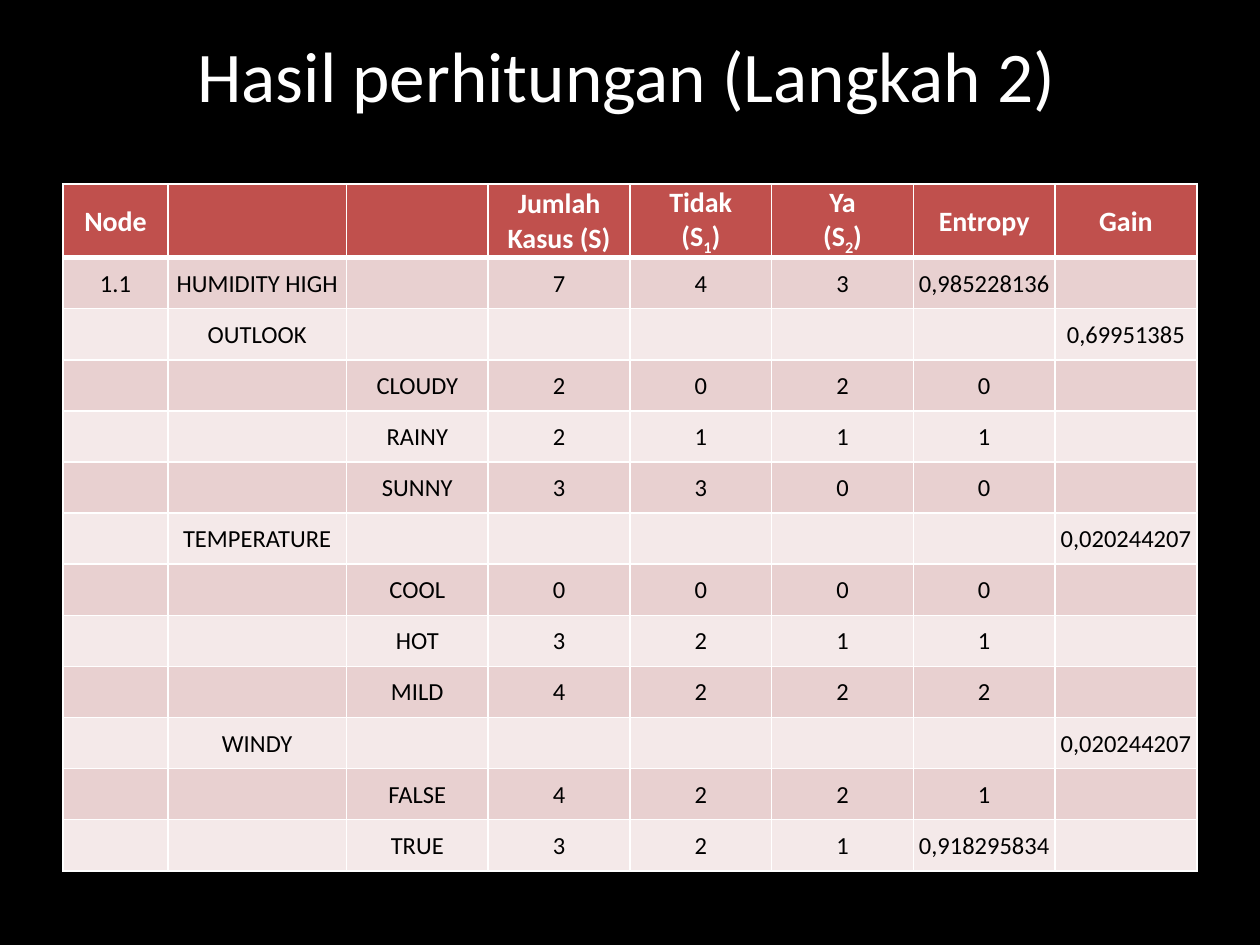
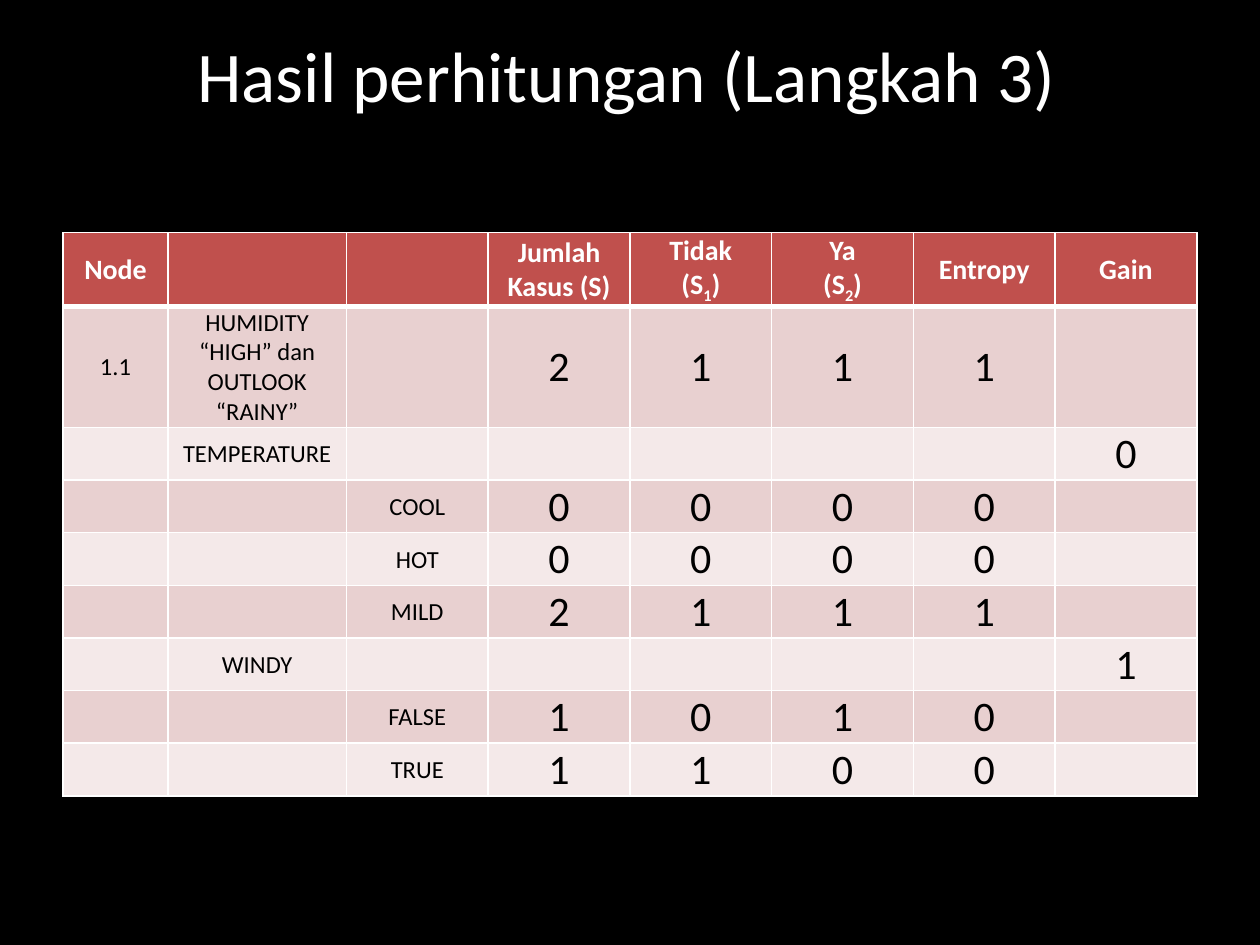
from dataclasses import dataclass

from lxml.etree import SubElement as Sub
from pptx import Presentation
from pptx.dml.color import RGBColor as Rgb
from pptx.enum.text import MSO_ANCHOR as Anchor, MSO_AUTO_SIZE as Fit, PP_ALIGN as Align
from pptx.oxml.ns import qn
from pptx.util import Pt


@dataclass(frozen=True)
class Theme:
    face: str = "Calibri"
    back: str = "000000"
    light: str = "FFFFFF"
    ink: str = "000000"
    head: str = "C0504D"
    bands: tuple = ("E8D0D0", "F4E9E9")
    title: float = 40.7
    label: int = 16
    body: int = 14
    thin: int = 1
    thick: int = 3


THEME = Theme()
COLS = (60, 102) + (81,) * 6
TITLE = (34, 22, 648, 50)
HEAD = ("Node", "", "", "Jumlah Kasus (S)", "Tidak\n(S_1)", "Ya\n(S_2)", "Entropy", "Gain")
HEAD_TALL = 42


def root(name, *vals):
    return ("1.1", name, "", *vals, "")


def group(name, gain):
    return ("", name, *[""] * 5, gain)


def case(name, *vals):
    return ("", "", name, *vals, "")


STEP_2 = (
    root("HUMIDITY HIGH", "7", "4", "3", "0,985228136"),
    group("OUTLOOK", "0,69951385"),
    case("CLOUDY", *"2020"),
    case("RAINY", *"2111"),
    case("SUNNY", *"3300"),
    group("TEMPERATURE", "0,020244207"),
    case("COOL", *"0000"),
    case("HOT", *"3211"),
    case("MILD", *"4222"),
    group("WINDY", "0,020244207"),
    case("FALSE", *"4221"),
    case("TRUE", "3", "2", "1", "0,918295834"),
)
STEP_3 = (
    root("HUMIDITY “HIGH” dan OUTLOOK “RAINY”", *"2111"),
    group("TEMPERATURE", "0"),
    case("COOL", *"0000"),
    case("HOT", *"0000"),
    case("MILD", *"2111"),
    group("WINDY", "1"),
    case("FALSE", *"1010"),
    case("TRUE", *"1100"),
)


def apply(item, form):
    for key, val in form.items():
        setattr(item, key, val)


def add_run(para, text, size, color, bold=False):
    run = para.add_run()
    run.text = text
    apply(run.font, {"name": THEME.face, "size": Pt(size), "bold": bold})
    run.font.color.rgb = Rgb.from_string(color)
    return run


def add_line(para, text, *look):
    start, mark, rest = text.partition("_")
    add_run(para, start, *look)
    if mark:
        low = add_run(para, rest[0], *look)
        low.font._element.set("baseline", "-25000")
        add_run(para, rest[1:], *look)


def add_edges(cell, top, base):
    props = cell._tc.get_or_add_tcPr()
    for side, width in zip("LRTB", (THEME.thin, THEME.thin, top, base)):
        edge = Sub(props, qn(f"a:ln{side}"), w=str(Pt(width)))
        Sub(Sub(edge, qn("a:solidFill")), qn("a:srgbClr"), val=THEME.light)


def fill_cell(cell, text, fill, look, top, base):
    apply(cell, {
        "margin_left": Pt(0.72), "margin_right": Pt(0.72),
        "margin_top": Pt(0.72), "margin_bottom": Pt(0),
        "vertical_anchor": Anchor.MIDDLE,
    })
    add_edges(cell, top, base)
    cell.fill.solid()
    cell.fill.fore_color.rgb = Rgb.from_string(fill)
    for i, line in enumerate(text.split("\n") if text else ()):
        frame = cell.text_frame
        para = frame.add_paragraph() if i else frame.paragraphs[0]
        para.alignment = Align.CENTER
        add_line(para, line, *look)


def add_title(slide, text, box):
    title = slide.shapes.title
    apply(title, dict(zip(("left", "top", "width", "height"), map(Pt, box))))
    frame = title.text_frame
    apply(frame, {"word_wrap": True, "auto_size": Fit.NONE, "vertical_anchor": Anchor.MIDDLE})
    para = frame.paragraphs[0]
    apply(para, {"alignment": Align.CENTER, "line_spacing": 0.8})
    add_run(para, text, THEME.title, THEME.light)


def add_grid(slide, rows, box, talls, size):
    grid = slide.shapes.add_table(len(rows) + 1, len(COLS), *map(Pt, box)).table
    grid.horz_banding = False
    for col, width in zip(grid.columns, COLS):
        col.width = Pt(width)
    for row, tall in zip(grid.rows, talls):
        row.height = Pt(tall)
    for r, texts in enumerate((HEAD, *rows)):
        top = THEME.thick if r == 1 else THEME.thin
        base = THEME.thin if r else THEME.thick
        fill = THEME.bands[(r - 1) % 2] if r else THEME.head
        for c, text in enumerate(texts):
            if r:
                look = (size if c > 2 else THEME.body, THEME.ink)
            else:
                look = (THEME.label, THEME.light, True)
            fill_cell(grid.cell(r, c), text, fill, look, top, base)


def add_step(deck, step, rows, top, first, tall, size):
    slide = deck.slides.add_slide(deck.slide_layouts[5])
    talls = (HEAD_TALL, first) + (tall,) * (len(rows) - 1)
    add_grid(slide, rows, (36, top, sum(COLS), sum(talls)), talls, size)
    add_title(slide, f"Hasil perhitungan (Langkah {step})", TITLE)


def main():
    deck = Presentation()
    apply(deck, {"slide_width": Pt(720), "slide_height": Pt(540)})
    back = deck.slide_master.background.fill
    back.solid()
    back.fore_color.rgb = Rgb.from_string(THEME.back)
    add_step(deck, 2, STEP_2, 105.2, 29.2, 29.2, THEME.body)
    add_step(deck, 3, STEP_3, 133, 69.2, 30.1, 24)
    deck.save("out.pptx")


if __name__ == "__main__":
    main()
